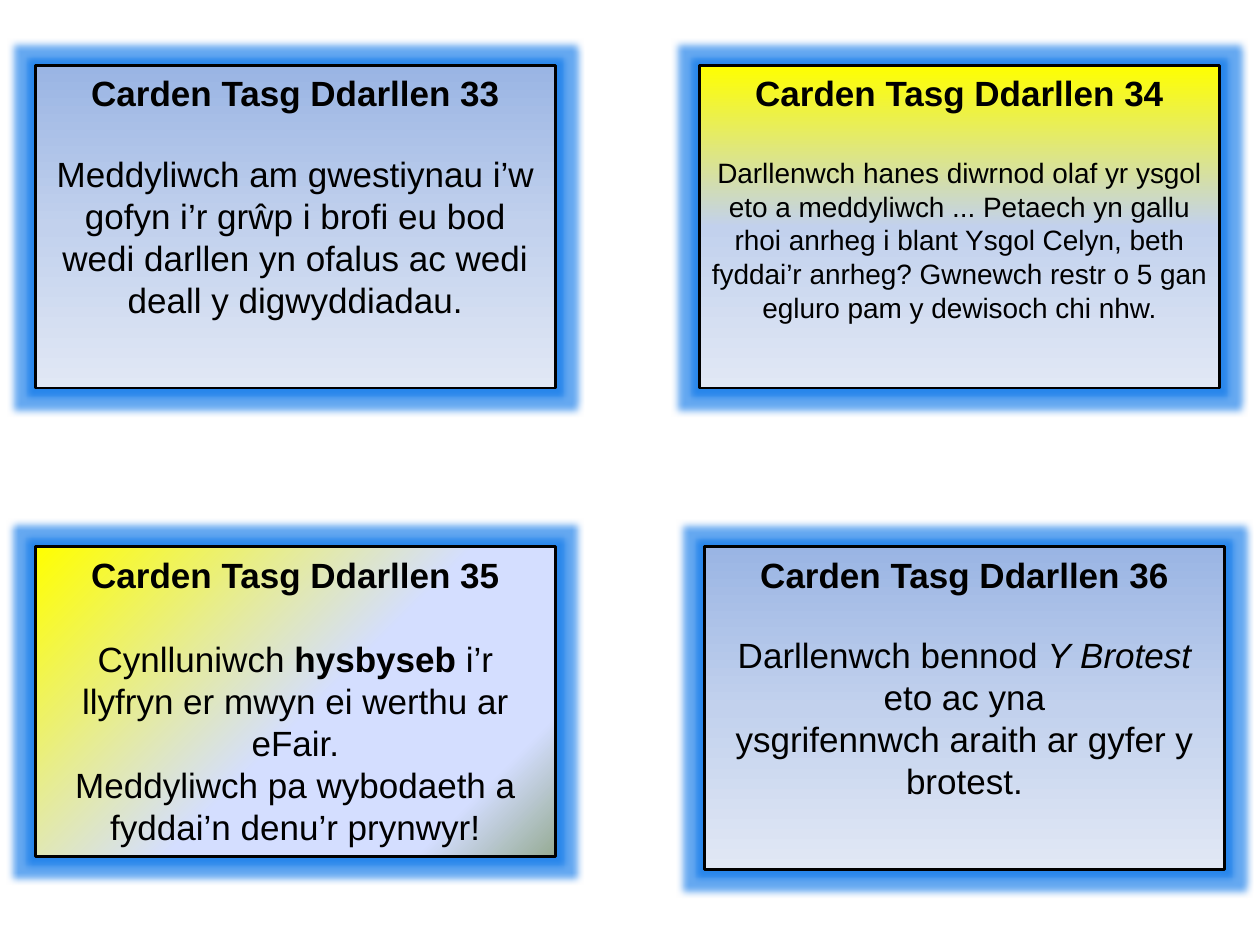
import lxml.etree
import pptx
import pptx.dml.color
import pptx.enum.shapes
import pptx.enum.text
import pptx.oxml.ns
import pptx.util

Inches = pptx.util.Inches
Pt = pptx.util.Pt
qn = pptx.oxml.ns.qn

COLORS = {
    "black": "000000", "glow": "0070E8", "blue": "9AB5E4", "mid": "C2D1ED",
    "pale": "E1E8F5", "yellow": "FFFF00", "lilac": "D4DEFF", "sage": "96AB94",
}
BLUE = ([(0, "blue"), (50, "mid"), (100, "pale")], 90)
YELLOW = ([(0, "yellow"), (50, "mid"), (100, "pale")], 90)
DIAGONAL = ([(0, "yellow"), (53, "lilac"), (83, "lilac"), (100, "sage")], 45)
BOLD = {"bold": True}
ITALIC = {"italic": True}

CARDS = [
    {"number": 33, "box": (0.28, 0.52, 4.13, 2.56), "fill": BLUE, "size": 20, "gap": 22,
     "body": [[("Meddyliwch am gwestiynau i’w gofyn i’r grŵp i brofi eu bod wedi "
                "darllen yn ofalus ac wedi deall y digwyddiadau.", {})]]},
    {"number": 34, "box": (5.55, 0.52, 4.13, 2.56), "fill": YELLOW, "size": 16, "gap": 24,
     "body": [[("Darllenwch hanes diwrnod olaf yr ysgol eto a meddyliwch ... Petaech yn "
                "gallu rhoi anrheg i blant Ysgol Celyn, beth fyddai’r anrheg? Gwnewch "
                "restr o 5 gan egluro pam y dewisoch chi nhw.", {})]]},
    {"number": 35, "box": (0.28, 4.34, 4.13, 2.46), "fill": DIAGONAL, "size": 20, "gap": 24,
     "body": [[("Cynlluniwch ", {}), ("hysbyseb", BOLD),
               (" i’r llyfryn er mwyn ei werthu ar eFair.", {})],
              [("Meddyliwch pa wybodaeth a fyddai’n denu’r prynwyr!", {})]]},
    {"number": 36, "box": (5.59, 4.34, 4.13, 2.56), "fill": BLUE, "size": 20, "gap": 22,
     "body": [[("Darllenwch bennod ", {}), ("Y Brotest ", ITALIC), ("eto ac yna", {})],
              [("ysgrifennwch araith ar gyfer y brotest.", {})]]},
]


def rgb(name):
    return pptx.dml.color.RGBColor.from_string(COLORS[name])


def apply(target, values):
    for key, value in values.items():
        setattr(target, key, value)


def add_xml(parent, tag, **attributes):
    return lxml.etree.SubElement(parent, qn(tag), attributes)


def set_gradient(sp, stops, angle):
    sp.fill.gradient()
    grad = sp.fill._xPr.find(qn("a:gradFill"))
    for child in list(grad):
        grad.remove(child)
    gs_list = add_xml(grad, "a:gsLst")
    for position, color in stops:
        gs = add_xml(gs_list, "a:gs", pos=str(position * 1000))
        add_xml(gs, "a:srgbClr", val=COLORS[color])
    add_xml(grad, "a:lin", ang=str(angle * 60000), scaled="0")


def set_glow(sp, radius):
    sp.shadow.inherit = False
    effects = sp._element.spPr.find(qn("a:effectLst"))
    glow = add_xml(effects, "a:glow", rad=str(int(Pt(radius))))
    color = add_xml(glow, "a:srgbClr", val=COLORS["glow"])
    add_xml(color, "a:alpha", val="60000")


def add_paragraph(p, runs, size, gap=0):
    apply(p, {"alignment": pptx.enum.text.PP_ALIGN.CENTER, "space_before": Pt(gap)})
    for text, style in runs:
        r = p.add_run()
        r.text = text
        apply(r.font, {"name": "Arial", "size": Pt(size), "bold": False, **style})
        r.font.color.rgb = rgb("black")


def add_card(s, box, number, fill, size, gap, body):
    sp = s.shapes.add_shape(pptx.enum.shapes.MSO_SHAPE.RECTANGLE, *map(Inches, box))
    set_gradient(sp, *fill)
    sp.line.color.rgb = rgb("black")
    sp.line.width = Pt(1.5)
    set_glow(sp, 8)
    tf = sp.text_frame
    apply(tf, {"word_wrap": True, "vertical_anchor": pptx.enum.text.MSO_ANCHOR.TOP})
    add_paragraph(tf.paragraphs[0], [(f"Carden Tasg Ddarllen {number}", BOLD)], 20)
    for i, runs in enumerate(body):
        add_paragraph(tf.add_paragraph(), runs, size, 0 if i else gap)


def main():
    prs = pptx.Presentation()
    apply(prs, {"slide_width": Inches(10), "slide_height": Inches(7.5)})
    s = prs.slides.add_slide(prs.slide_layouts[6])
    for card in CARDS:
        add_card(s, **card)
    prs.save("out.pptx")


if __name__ == "__main__":
    main()
